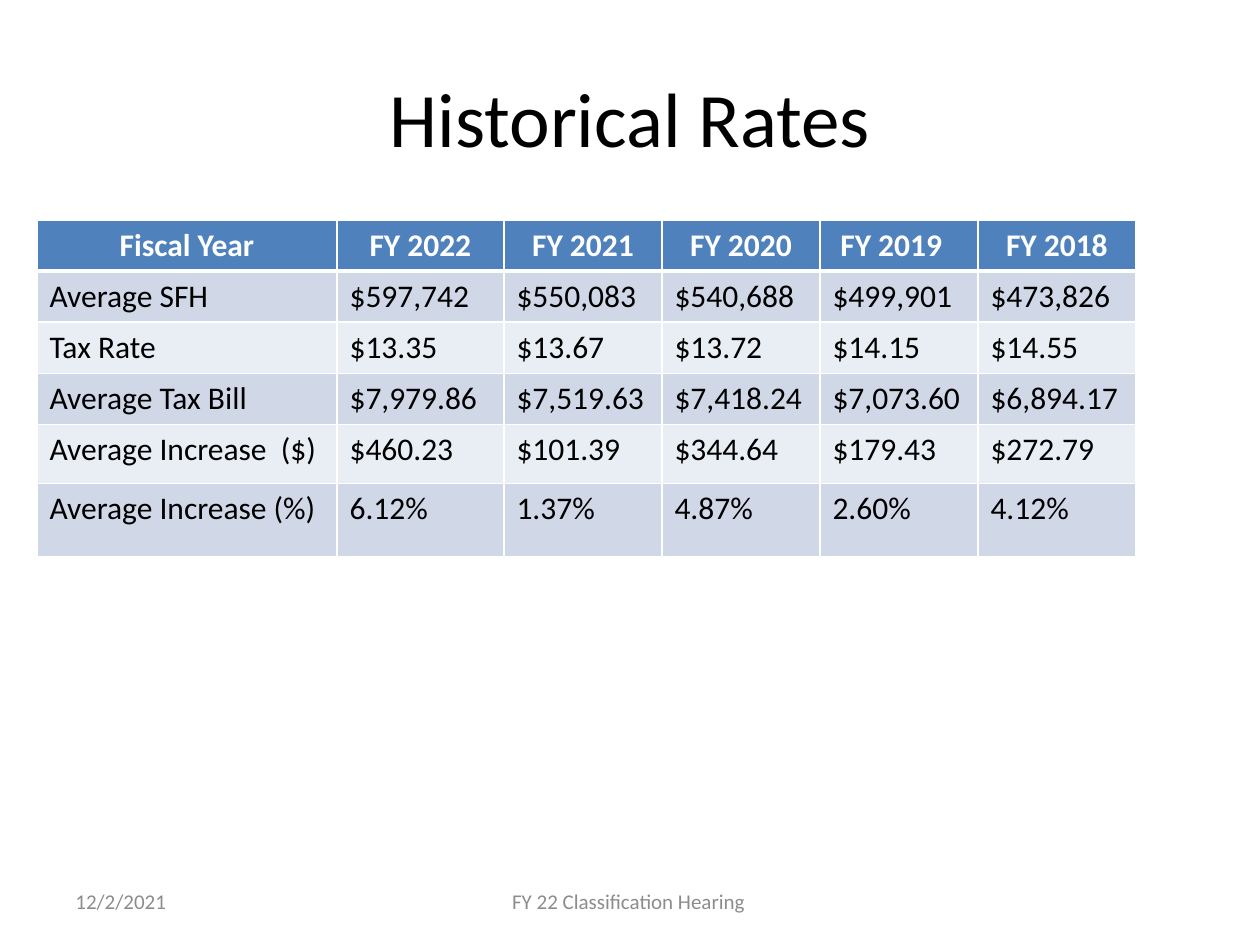
from pptx import Presentation
from pptx.dml.color import RGBColor
from pptx.enum.text import MSO_ANCHOR, PP_ALIGN
from pptx.oxml import parse_xml
from pptx.oxml.ns import nsdecls
from pptx.util import Pt

PX = 914400 / 126
COLS = [300, 167, 158, 158, 158, 158]
ROWS = [51, 51, 51, 51, 59, 73]
RATES = [
    ["Fiscal Year", "FY 2022", "FY 2021", "FY 2020", "FY 2019", "FY 2018"],
    ["Average SFH", "$597,742", "$550,083", "$540,688", "$499,901", "$473,826"],
    ["Tax Rate", "$13.35", "$13.67", "$13.72", "$14.15", "$14.55"],
    ["Average Tax Bill", "$7,979.86", "$7,519.63", "$7,418.24", "$7,073.60", "$6,894.17"],
    ["Average Increase  ($)", "$460.23", "$101.39", "$344.64", "$179.43", "$272.79"],
    ["Average Increase (%)", "6.12%", "1.37%", "4.87%", "2.60%", "4.12%"],
]


def px(n):
    return round(n * PX)


def rgb(color):
    return RGBColor.from_string(color)


class Deck:
    """Holds the style and the current slide, and adds elements to it."""

    font = "Calibri"
    black, white, grey = "000000", "FFFFFF", "8C8C8C"
    header, bands = "4F81BD", ("E9EDF4", "D0D8E8")

    def __init__(self, width, height):
        self.prs = Presentation()
        self.prs.slide_width, self.prs.slide_height = px(width), px(height)
        self.s = self.prs.slides.add_slide(self.prs.slide_layouts[5])

    def text(self, tf, text, size, color, align=PP_ALIGN.LEFT, bold=False):
        p = tf.paragraphs[0]
        p.alignment = align
        r = p.add_run()
        r.text = text
        r.font.name, r.font.size, r.font.bold = self.font, Pt(size), bold
        r.font.color.rgb = rgb(color)

    def title(self, text, x, y, w, h):
        sp = self.s.shapes.title
        sp.left, sp.top, sp.width, sp.height = px(x), px(y), px(w), px(h)
        sp.text_frame.vertical_anchor = MSO_ANCHOR.MIDDLE
        self.text(sp.text_frame, text, 44, self.black, PP_ALIGN.CENTER)

    def footer(self, text, x, y, w, h, align):
        tf = self.s.shapes.add_textbox(px(x), px(y), px(w), px(h)).text_frame
        tf.word_wrap = True
        tf.vertical_anchor = MSO_ANCHOR.MIDDLE
        self.text(tf, text, 12, self.grey, align)

    def borders(self, cell, bottom=1, top=1):
        tcPr = cell._tc.get_or_add_tcPr()
        widths = {"lnL": 1, "lnR": 1, "lnT": top, "lnB": bottom}
        for i, (tag, width) in enumerate(widths.items()):
            tcPr.insert(i, parse_xml(
                f'<a:{tag} {nsdecls("a")} w="{Pt(width)}"><a:solidFill>'
                f'<a:srgbClr val="{self.white}"/></a:solidFill></a:{tag}>'))

    def table(self, data, x, y, cols, rows):
        tbl = self.s.shapes.add_table(len(rows), len(cols), px(x), px(y),
                                      px(sum(cols)), px(sum(rows))).table
        for col, w in zip(tbl.columns, cols):
            col.width = px(w)
        for row, h in zip(tbl.rows, rows):
            row.height = px(h)
        for i, values in enumerate(data):
            for j, text in enumerate(values):
                cell = tbl.cell(i, j)
                cell.fill.solid()
                cell.fill.fore_color.rgb = rgb(self.bands[i % 2] if i else self.header)
                self.borders(cell, bottom=1 if i else 3, top=3 if i == 1 else 1)
                if i:
                    self.text(cell.text_frame, text, 18, self.black)
                else:
                    self.text(cell.text_frame, text, 18, self.white, PP_ALIGN.CENTER, True)
        return tbl


def main():
    deck = Deck(1260, 945)
    deck.title("Historical Rates", 63, 38, 1134, 158)
    tbl = deck.table(RATES, 37, 220, COLS, ROWS)
    tbl.cell(0, 4).margin_right = px(28)
    deck.footer("12/2/2021", 63, 876, 294, 50, PP_ALIGN.LEFT)
    deck.footer("FY 22 Classification Hearing", 429, 876, 399, 50, PP_ALIGN.CENTER)
    deck.prs.save("out.pptx")


if __name__ == "__main__":
    main()
